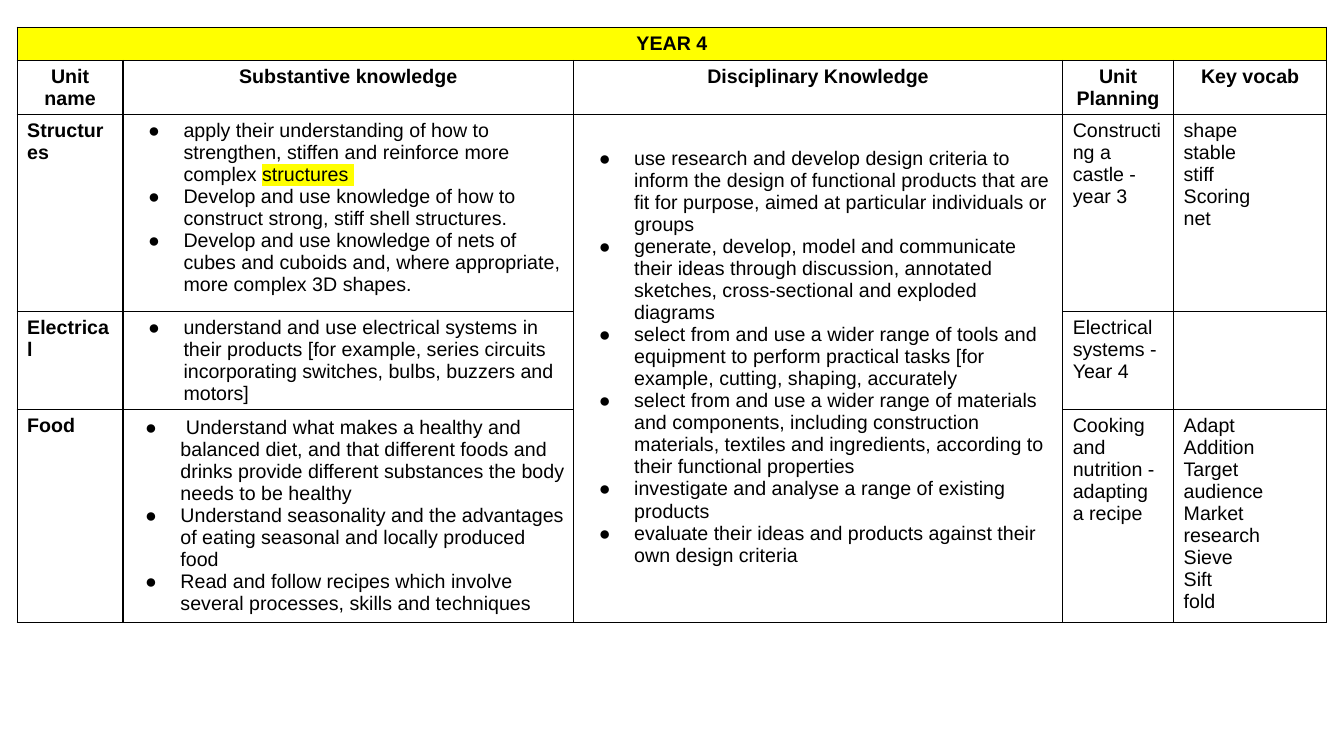
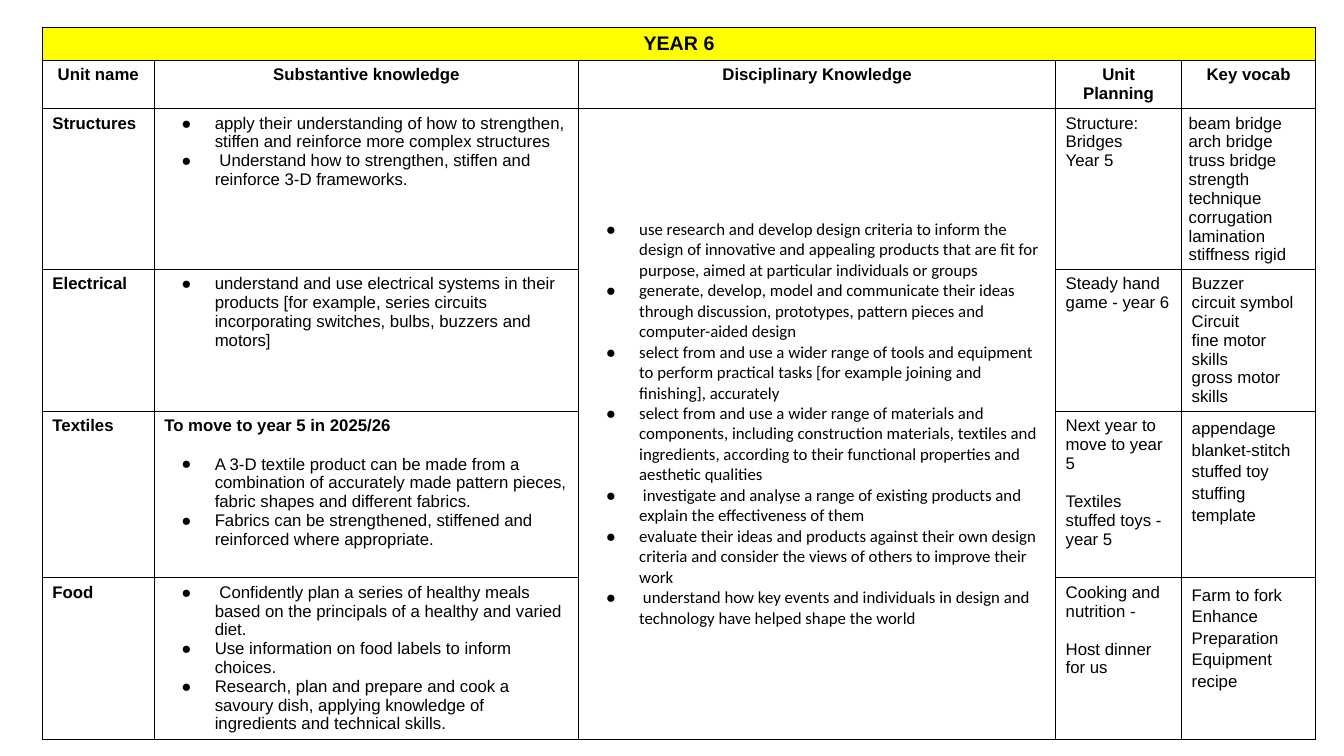
from dataclasses import dataclass

from lxml import etree
from pptx import Presentation
from pptx.dml.color import RGBColor
from pptx.enum import text
from pptx.oxml import ns
from pptx.util import Inches, Pt

COLORS = {"ink": "000000", "band": "FFFF00"}
FONT = "Arial"
TITLE_SIZE = 14
TABLE_TOP = 0.27
BULLET_LEFT = 0.5
LINE_GAP = 13.8
HEADERS = ["Unit name", "Substantive knowledge", "Disciplinary Knowledge",
           "Unit Planning", "Key vocab"]
NAME, SUBSTANTIVE, DISCIPLINARY, PLANNING, VOCAB = range(5)


@dataclass
class Line:
    """One paragraph; highlight is the marked text that ends it."""
    text: str
    bold: bool = False
    bullet: bool = False
    center: bool = False
    highlight: str = ""
    space_before: float = 0
    spacing: float = 1.0


@dataclass
class Look:
    """Text style of one table."""
    size: int
    hanging: float
    disciplinary_font: str = FONT


def bullets(*items):
    return [item if isinstance(item, Line) else Line(item, bullet=True) for item in items]


def words(*items, spacing=1.0):
    return [item if isinstance(item, Line) else Line(item, spacing=spacing) for item in items]


def add_element(parent, tag, **attributes):
    return etree.SubElement(parent, ns.qn(tag), **attributes)


def add_color(parent, tag, color):
    add_element(add_element(parent, tag), "a:srgbClr", val=COLORS[color])


def set_borders(cell):
    properties = cell._tc.get_or_add_tcPr()
    for side in ("a:lnL", "a:lnR", "a:lnT", "a:lnB"):
        border = add_element(properties, side, w=str(Pt(1)))
        add_color(border, "a:solidFill", "ink")


def set_margins(cell, horizontal, vertical):
    cell.margin_left = cell.margin_right = Inches(horizontal)
    cell.margin_top = cell.margin_bottom = Inches(vertical)


def set_bullet(paragraph, hanging):
    properties = paragraph._p.get_or_add_pPr()
    properties.set("marL", str(Inches(BULLET_LEFT)))
    properties.set("indent", str(-Inches(hanging)))
    add_color(properties, "a:buClr", "ink")
    add_element(properties, "a:buFont", typeface=FONT)
    add_element(properties, "a:buChar", char="●")


def add_run(paragraph, content, size, font, bold, highlighted=False):
    run = paragraph.add_run()
    run.text = content
    run.font.size = Pt(size)
    run.font.bold = bold
    run.font.color.rgb = RGBColor.from_string(COLORS["ink"])
    if highlighted:
        add_color(run._r.get_or_add_rPr(), "a:highlight", "band")
    run.font.name = font


def write_cell(cell, lines, size, font=FONT, hanging=0):
    frame = cell.text_frame
    for index, line in enumerate(lines):
        paragraph = frame.add_paragraph() if index else frame.paragraphs[0]
        paragraph.alignment = text.PP_ALIGN.CENTER if line.center else text.PP_ALIGN.LEFT
        paragraph.line_spacing = line.spacing
        paragraph.space_before = Pt(line.space_before)
        if line.bullet:
            set_bullet(paragraph, hanging)
        add_run(paragraph, line.text, size, font, line.bold)
        if line.highlight:
            add_run(paragraph, line.highlight, size, font, line.bold, highlighted=True)


def add_year_slide(presentation, title, left, widths, heights, look, disciplinary, units):
    """Add a year table; each unit is (name, substantive, planning, vocab).

    Returns the table.
    """
    slide = presentation.slides.add_slide(presentation.slide_layouts[6])
    table = slide.shapes.add_table(
        len(heights), len(widths), Inches(left), Inches(TABLE_TOP),
        Inches(sum(widths)), Inches(sum(heights))).table
    table.first_row = table.horz_banding = False
    for column, width in zip(table.columns, widths):
        column.width = Inches(width)
    for row, height in zip(table.rows, heights):
        row.height = Inches(height)
    for cell in table.iter_cells():
        set_borders(cell)
        set_margins(cell, 0.1, 0.05)
        cell.fill.background()

    banner = table.cell(0, 0)
    banner.merge(table.cell(0, len(widths) - 1))
    banner.fill.solid()
    banner.fill.fore_color.rgb = RGBColor.from_string(COLORS["band"])
    write_cell(banner, [Line(title, bold=True, center=True)], TITLE_SIZE)
    for column, header in enumerate(HEADERS):
        write_cell(table.cell(1, column), [Line(header, bold=True, center=True)], look.size)

    shared = table.cell(2, DISCIPLINARY)
    shared.merge(table.cell(len(heights) - 1, DISCIPLINARY))
    shared.vertical_anchor = text.MSO_ANCHOR.MIDDLE
    write_cell(shared, disciplinary, look.size, look.disciplinary_font, look.hanging)
    for row, (name, substantive, planning, vocab) in enumerate(units, start=2):
        contents = {NAME: [Line(name, bold=True)], SUBSTANTIVE: substantive,
                    PLANNING: planning, VOCAB: vocab}
        for column, lines in contents.items():
            write_cell(table.cell(row, column), lines, look.size, hanging=look.hanging)
    return table


ELECTRICAL = bullets(
    "understand and use electrical systems in their products [for example, series circuits "
    "incorporating switches, bulbs, buzzers and motors]")

YEAR_4_DISCIPLINARY = bullets(
    "use research and develop design criteria to inform the design of functional products "
    "that are fit for purpose, aimed at particular individuals or groups",
    "generate, develop, model and communicate their ideas through discussion, annotated "
    "sketches, cross-sectional and exploded diagrams",
    "select from and use a wider range of tools and equipment to perform practical tasks "
    "[for example, cutting, shaping, accurately",
    "select from and use a wider range of materials and components, including construction "
    "materials, textiles and ingredients, according to their functional properties",
    "investigate and analyse a range of existing products",
    "evaluate their ideas and products against their own design criteria")

YEAR_4_UNITS = [
    ("Structures",
     bullets(
         Line("apply their understanding of how to strengthen, stiffen and reinforce more "
              "complex ", bullet=True, highlight="structures "),
         "Develop and use knowledge of how to construct strong, stiff shell structures.",
         "Develop and use knowledge of nets of cubes and cuboids and, where appropriate, "
         "more complex 3D shapes."),
     words("Constructing a castle - year 3"),
     words("shape", "stable", "stiff", "Scoring", "net")),
    ("Electrical", ELECTRICAL, words("Electrical systems - Year 4"), []),
    ("Food",
     bullets(
         " Understand what makes a healthy and balanced diet, and that different foods and "
         "drinks provide different substances the body needs to be healthy",
         "Understand seasonality and the advantages of eating seasonal and locally produced "
         "food",
         "Read and follow recipes which involve several processes, skills and techniques"),
     words("Cooking and nutrition - adapting a recipe"),
     words("Adapt", "Addition", "Target audience", "Market research", "Sieve", "Sift",
           "fold")),
]

YEAR_6_DISCIPLINARY = bullets(
    "use research and develop design criteria to inform the design of innovative and "
    "appealing products that are fit for purpose, aimed at particular individuals or groups",
    "generate, develop, model and communicate their ideas through discussion, prototypes, "
    "pattern pieces and computer-aided design",
    "select from and use a wider range of tools and equipment to perform practical tasks "
    "[for example joining and finishing], accurately",
    "select from and use a wider range of materials and components, including construction "
    "materials, textiles and ingredients, according to their functional properties and "
    "aesthetic qualities",
    " investigate and analyse a range of existing products and explain the effectiveness "
    "of them",
    "evaluate their ideas and products against their own design criteria and consider the "
    "views of others to improve their work",
    " understand how key events and individuals in design and technology have helped shape "
    "the world")

YEAR_6_UNITS = [
    ("Structures",
     bullets(
         "apply their understanding of how to strengthen, stiffen and reinforce more complex "
         "structures",
         " Understand how to strengthen, stiffen and reinforce 3-D frameworks."),
     words("Structure: Bridges", "Year 5"),
     words("beam bridge arch bridge truss bridge strength technique corrugation lamination "
           "stiffness rigid")),
    ("Electrical", ELECTRICAL, words("Steady hand game - year 6"),
     words("Buzzer", "circuit symbol", "Circuit", "fine motor skills",
           "gross motor skills")),
    ("Textiles",
     bullets(
         Line("To move to year 5 in 2025/26", bold=True),
         Line("A 3-D textile product can be made from a combination of accurately made "
              "pattern pieces, fabric shapes and different fabrics.",
              bullet=True, space_before=LINE_GAP),
         "Fabrics can be strengthened, stiffened and reinforced where appropriate."),
     words("Next year to move to year 5",
           Line("Textiles stuffed toys - year 5", space_before=LINE_GAP)),
     words("appendage", "blanket-stitch", "stuffed toy", "stuffing", "template",
           spacing=1.15)),
    ("Food",
     bullets(
         " Confidently plan a series of healthy meals based on the principals of a healthy "
         "and varied diet.",
         "Use information on food labels to inform choices.",
         "Research, plan and prepare and cook a savoury dish, applying knowledge of "
         "ingredients and technical skills."),
     words("Cooking and nutrition -", Line("Host dinner for us", space_before=LINE_GAP)),
     words("Farm to fork", "Enhance", "Preparation", "Equipment", "recipe", spacing=1.15)),
]


def main():
    presentation = Presentation()
    presentation.slide_width = Inches(13.33)
    presentation.slide_height = Inches(7.5)

    year_4 = add_year_slide(
        presentation, "YEAR 4", 0.17, [1.05, 4.47, 4.85, 1.1, 1.52],
        [0.33, 0.54, 1.95, 0.97, 2.11], Look(14, 0.35), YEAR_4_DISCIPLINARY, YEAR_4_UNITS)
    set_margins(year_4.cell(4, SUBSTANTIVE), 0.07, 0.07)
    year_4.cell(2, DISCIPLINARY).margin_bottom = Inches(0.28)

    year_6 = add_year_slide(
        presentation, "YEAR 6", 0.42, [1.11, 4.21, 4.73, 1.25, 1.33],
        [0.33, 0.48, 1.59, 1.41, 1.65, 1.6], Look(12, 0.33, "Calibri"),
        YEAR_6_DISCIPLINARY, YEAR_6_UNITS)
    set_margins(year_6.cell(2, VOCAB), 0.07, 0.05)

    presentation.save("out.pptx")


if __name__ == "__main__":
    main()
